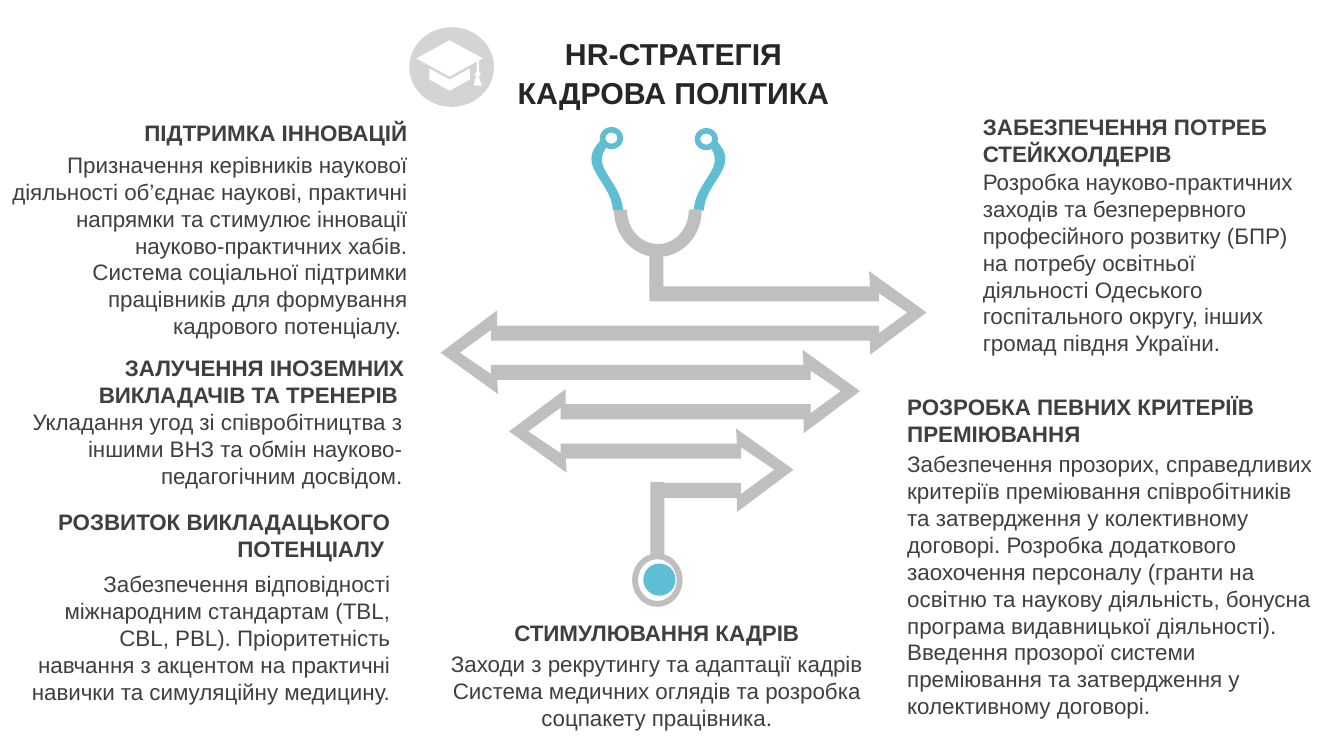
"""Build the HR strategy slide: a stethoscope of zigzag arrows with six text blocks."""
from pptx import Presentation
from pptx.dml.color import RGBColor
from pptx.enum.shapes import MSO_SHAPE
from pptx.enum.text import MSO_ANCHOR, MSO_AUTO_SIZE, PP_ALIGN
from pptx.util import Inches, Pt

TEAL = RGBColor(0x60, 0xBE, 0xD4)
GRAY = RGBColor(0xBF, 0xBF, 0xBF)
BADGE = RGBColor(0xD4, 0xD4, 0xD4)
WHITE = RGBColor(0xFF, 0xFF, 0xFF)
TITLE_COLOR = RGBColor(0x26, 0x26, 0x26)
TEXT_COLOR = RGBColor(0x3F, 0x3F, 0x3F)

presentation = Presentation()
presentation.slide_width = Inches(13.33)
presentation.slide_height = Inches(7.5)
slide = presentation.slides.add_slide(presentation.slide_layouts[5])


def add_preset(preset, box, color, adjustments=()):
    shape = slide.shapes.add_shape(preset, *[Inches(value) for value in box])
    for index, value in enumerate(adjustments):
        shape.adjustments[index] = value
    shape.fill.solid()
    shape.fill.fore_color.rgb = color
    shape.line.fill.background()
    shape.shadow.inherit = False
    return shape


def add_outline(contours, color):
    contours = [[(Inches(x), Inches(y)) for x, y in contour] for contour in contours]
    builder = slide.shapes.build_freeform(*contours[0][0])
    for index, contour in enumerate(contours):
        if index:
            builder.move_to(*contour[0])
        builder.add_line_segments(contour[1:], close=True)
    shape = builder.convert_to_shape()
    shape.fill.solid()
    shape.fill.fore_color.rgb = color
    shape.line.fill.background()
    shape.shadow.inherit = False


title = slide.shapes.title
title.left, title.top = Inches(0.35), Inches(0.37)
title.width, title.height = Inches(12.66), Inches(0.79)
title.text_frame.text = "HR-СТРАТЕГІЯ\nКАДРОВА ПОЛІТИКА"
title.text_frame.auto_size = MSO_AUTO_SIZE.NONE
title.text_frame.vertical_anchor = MSO_ANCHOR.MIDDLE
for paragraph, space_before in zip(title.text_frame.paragraphs, (0, 10)):
    paragraph.alignment = PP_ALIGN.CENTER
    paragraph.line_spacing = 0.7
    paragraph.space_before = Pt(space_before)
    paragraph.font.name = "Arial"
    paragraph.font.size = Pt(21.6)
    paragraph.font.bold = True
    paragraph.font.color.rgb = TITLE_COLOR

text_blocks = [
    (PP_ALIGN.RIGHT, (-0.06, 1, 4.2, 0.64), "ПІДТРИМКА ІННОВАЦІЙ",
     (-0.06, 1.45, 4.2, 1.99),
     "Призначення керівників наукової діяльності об’єднає наукові, практичні "
     "напрямки та стимулює інновації науково-практичних хабів.\n"
     "Система соціальної підтримки працівників для формування кадрового потенціалу. "),
    (PP_ALIGN.RIGHT, (0.31, 3.46, 3.8, 0.64),
     "ЗАЛУЧЕННЯ ІНОЗЕМНИХ ВИКЛАДАЧІВ ТА ТРЕНЕРІВ ",
     (-0.18, 4, 4.27, 0.91),
     "Укладання угод зі співробітництва з іншими ВНЗ та обмін "
     "науково-педагогічним досвідом."),
    (PP_ALIGN.RIGHT, (0.1, 4.85, 3.87, 0.91), "РОЗВИТОК ВИКЛАДАЦЬКОГО ПОТЕНЦІАЛУ ",
     (0.1, 5.61, 3.87, 1.45),
     "Забезпечення відповідності міжнародним стандартам (TBL, CBL, PBL). "
     "Пріоритетність навчання з акцентом на практичні навички та симуляційну медицину."),
    (PP_ALIGN.LEFT, (9.65, 1.07, 3.15, 0.64), "ЗАБЕЗПЕЧЕННЯ ПОТРЕБ СТЕЙКХОЛДЕРІВ",
     (9.65, 1.62, 3.36, 1.99),
     "Розробка науково-практичних заходів та безперервного професійного розвитку (БПР) "
     "на потребу освітньої діяльності Одеського госпітального округу, "
     "інших громад півдня України."),
    (PP_ALIGN.LEFT, (8.9, 3.85, 4.26, 0.64), "РОЗРОБКА ПЕВНИХ КРИТЕРІЇВ ПРЕМІЮВАННЯ",
     (8.9, 4.42, 4.26, 2.79),
     "Забезпечення прозорих, справедливих критеріїв преміювання співробітників та "
     "затвердження у колективному договорі. Розробка додаткового заохочення персоналу "
     "(гранти на освітню та наукову діяльність, бонусна програма видавницької "
     "діяльності).\n"
     "Введення прозорої системи преміювання та затвердження у колективному договорі."),
    (PP_ALIGN.CENTER, (4.28, 6.09, 4.47, 0.37), "СТИМУЛЮВАННЯ КАДРІВ",
     (4.28, 6.4, 4.47, 0.91),
     "Заходи з рекрутингу та адаптації кадрів\n"
     "Система медичних оглядів та розробка соцпакету працівника."),
]
for alignment, heading_box, heading, body_box, body in text_blocks:
    for box, text, bold, anchor in (
        (heading_box, heading, True, MSO_ANCHOR.MIDDLE),
        (body_box, body, False, MSO_ANCHOR.TOP),
    ):
        text_box = slide.shapes.add_textbox(*[Inches(value) for value in box])
        text_frame = text_box.text_frame
        text_frame.word_wrap = True
        text_frame.vertical_anchor = anchor
        text_frame.text = text
        for paragraph in text_frame.paragraphs:
            paragraph.alignment = alignment
            paragraph.font.name = "Arial"
            paragraph.font.size = Pt(16)
            paragraph.font.bold = bold
            paragraph.font.color.rgb = TEXT_COLOR

outer_curve = [(5.97, 1.38), (5.69, 1.65), (6.06, 1.78), (6.08, 2.09)]
inner_curve = [(6.18, 2.09), (6.16, 1.78), (5.84, 1.67), (6.03, 1.44)]
STEPS = 16
left_tube = []
for curve in (outer_curve, inner_curve):
    for step in range(STEPS + 1):
        t = step / STEPS
        weights = ((1 - t) ** 3, 3 * t * (1 - t) ** 2, 3 * t ** 2 * (1 - t), t ** 3)
        left_tube.append(tuple(
            sum(weight * point[axis] for weight, point in zip(weights, curve))
            for axis in (0, 1)
        ))
right_tube = [(13.06 - x, y) for x, y in left_tube]
for tube in (left_tube, right_tube):
    add_outline([tube], TEAL)
for left, top in ((5.95, 1.26), (6.89, 1.27)):
    add_preset(MSO_SHAPE.DONUT, (left, top, 0.23, 0.22), TEAL, [0.25])

yoke = add_preset(MSO_SHAPE.BLOCK_ARC, (6.09, 1.62, 0.87, 0.93), GRAY,
                  [107.28, 0.255, 0.148])
yoke.rotation = 180
for stem_box in ((6.44, 2.49, 0.14, 0.37), (6.45, 4.78, 0.14, 0.72)):
    add_preset(MSO_SHAPE.RECTANGLE, stem_box, GRAY)

ROW_PITCH = 0.39
shafts = [(6.44, 8.72), (4.87, 8.72), (4.87, 8.04), (5.56, 8.04), (5.56, 7.35), (6.52, 7.35)]
for row, (left, right) in enumerate(shafts):
    add_preset(MSO_SHAPE.RECTANGLE,
               (left, 2.84 + row * ROW_PITCH, right - left, 0.15), GRAY)

HEAD_WIDTH, HEAD_HEIGHT = 0.57, 0.83
right_head = [(0.01, 0.16), (0, 0), (0.57, 0.41), (0.01, 0.83), (0.01, 0.68), (0.38, 0.41)]
left_head = [(HEAD_WIDTH - x, HEAD_HEIGHT - y) for x, y in right_head]
for row, left in enumerate((8.62, 4.37, 7.96, 5.05, 7.3)):
    head = left_head if row % 2 else right_head
    top = 2.69 + row * ROW_PITCH
    add_outline([[(left + x, top + y) for x, y in head]], GRAY)

add_preset(MSO_SHAPE.OVAL, (6.38, 5.59, 0.32, 0.32), TEAL)
add_preset(MSO_SHAPE.DONUT, (6.27, 5.49, 0.5, 0.53), GRAY, [0.115])

add_preset(MSO_SHAPE.OVAL, (4.06, 0.27, 0.84, 0.79), BADGE)
cap_base = [(4.26, 0.68), (4.46, 0.79), (4.66, 0.68), (4.66, 0.79), (4.46, 0.9), (4.26, 0.79)]
cap_top = [
    (4.46, 0.4), (4.79, 0.58), (4.75, 0.6), (4.75, 0.71), (4.77, 0.73), (4.75, 0.76),
    (4.78, 0.85), (4.7, 0.85), (4.72, 0.76), (4.71, 0.73), (4.73, 0.71), (4.73, 0.61),
    (4.46, 0.76), (4.13, 0.58),
]
add_outline([cap_base, cap_top], WHITE)

presentation.save("out.pptx")
